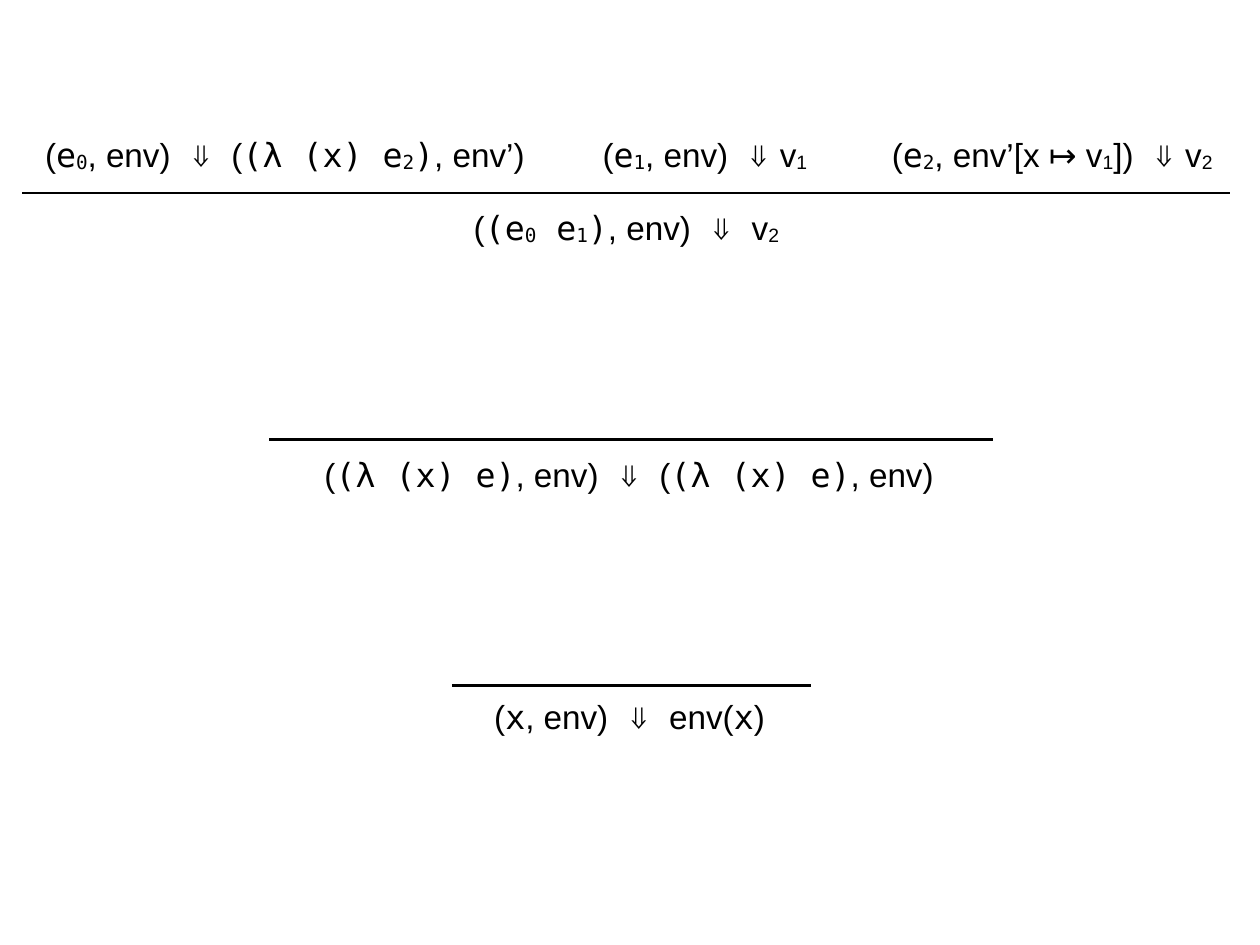
import pptx
import pptx.dml.color
import pptx.enum.shapes
import pptx.enum.text
import pptx.oxml.ns
import pptx.util
from lxml import etree

Inches = pptx.util.Inches
qn = pptx.oxml.ns.qn
COLORS = {"ink": "000000", "paper": "FFFFFF"}
INK = pptx.dml.color.RGBColor.from_string(COLORS["ink"])

prs = pptx.Presentation()
prs.slide_width, prs.slide_height = Inches(14.22), Inches(10.67)
s = prs.slides.add_slide(prs.slide_layouts[6])
s.background.fill.solid()
s.background.fill.fore_color.rgb = pptx.dml.color.RGBColor.from_string(COLORS["paper"])


def add_formula(text, left, top, width, height=0.58, size=27, font="Arial", mono="DejaVu Sans Mono"):
    """Backticks enclose code; an underscore makes the next character a subscript."""
    sp = s.shapes.add_textbox(Inches(left), Inches(top), Inches(width), Inches(height))
    tf = sp.text_frame
    tf.word_wrap = False
    tf.auto_size = pptx.enum.text.MSO_AUTO_SIZE.SHAPE_TO_FIT_TEXT
    tf.vertical_anchor = pptx.enum.text.MSO_ANCHOR.MIDDLE
    tf.margin_left = tf.margin_top = tf.margin_right = tf.margin_bottom = Inches(0.06)
    p = tf.paragraphs[0]
    p.alignment = pptx.enum.text.PP_ALIGN.CENTER
    for i, part in enumerate(text.split("`")):
        plain, *indexed = part.split("_")
        runs = [(plain, False)]
        for piece in indexed:
            runs += [(piece[0], True), (piece[1:], False)]
        for content, subscript in runs:
            if not content:
                continue
            r = p.add_run()
            r.text = content
            r.font.size = pptx.util.Pt(size)
            r.font.color.rgb = INK
            r.font.name = mono if i % 2 else font
            rPr = r.font._element
            for script in ("a:ea", "a:cs"):
                etree.SubElement(rPr, qn(script)).set("typeface", r.font.name)
            if subscript:
                rPr.set("baseline", "-6000")


# Inference bars: left end, right end, height on the slide
for x1, x2, y in [(0.25, 13.88, 2.18), (3.04, 11.21, 4.96), (5.1, 9.15, 7.74)]:
    bar = s.shapes.add_connector(pptx.enum.shapes.MSO_CONNECTOR.STRAIGHT,
                                 Inches(x1), Inches(y), Inches(x2), Inches(y))
    bar.line.color.rgb = INK
    bar.line.width = pptx.util.Pt(2)
    etree.SubElement(bar._element.spPr, qn("a:effectLst"))

# Application rule: three premises and a conclusion
add_formula("(`e_0`, env)  ⇓  (`(λ (x) e_2)`, env’)", 0.4, 1.45, 5.63)
add_formula("(`e_1`, env)  ⇓ v_1", 6.69, 1.45, 2.53)
add_formula("(`e_2`, env’[x ↦ v_1])  ⇓ v_2", 9.95, 1.43, 3.85, height=0.62)
add_formula("(`(e_0 e_1)`, env)  ⇓  v_2", 5.23, 2.28, 3.68)

# Closure and variable rules: no premises
add_formula("(`(λ (x) e)`, env)  ⇓  (`(λ (x) e)`, env)", 3.58, 5.06, 7.04)
add_formula("(`x`, env)  ⇓  env(`x`)", 5.49, 7.8, 3.23)

prs.save("out.pptx")
